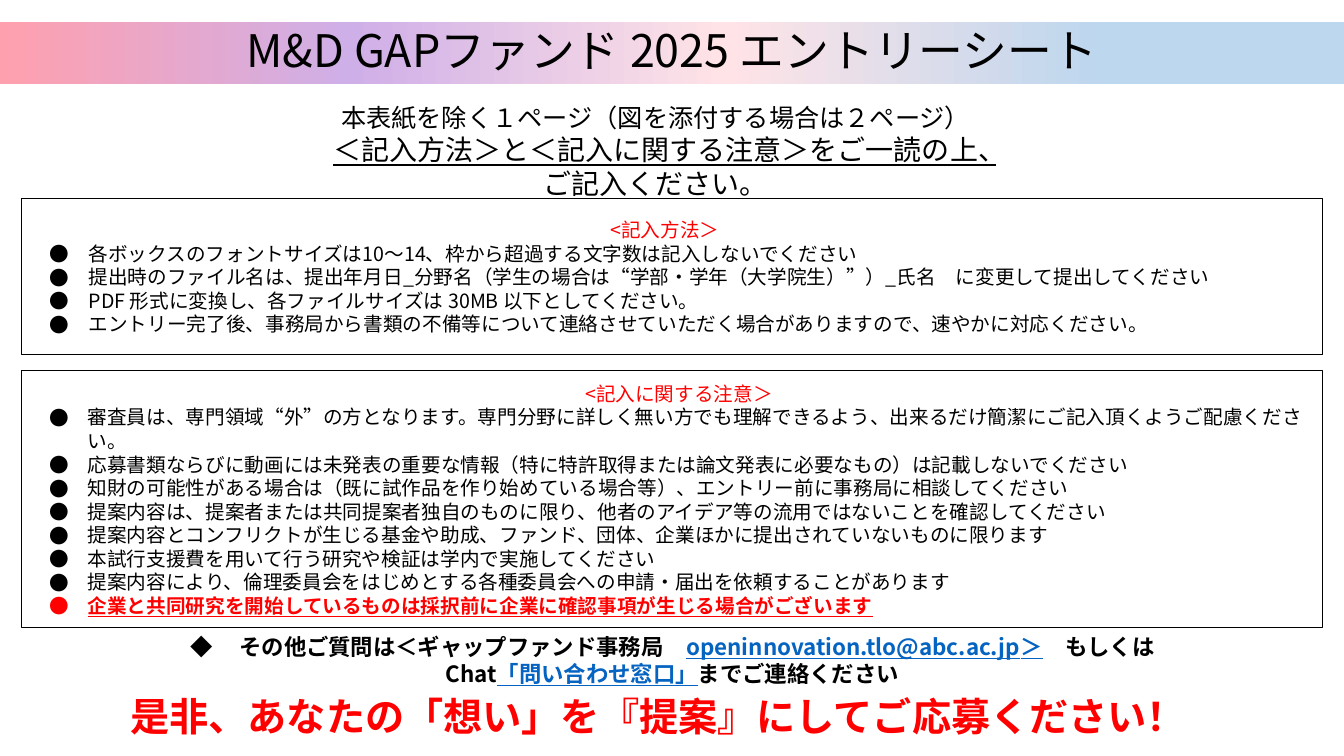
from lxml import etree
from pptx import Presentation
from pptx.dml.color import RGBColor
from pptx.enum import shapes, text
from pptx.oxml import ns
from pptx.util import Pt

BLACK = RGBColor(0x00, 0x00, 0x00)
RED = RGBColor(0xFF, 0x00, 0x00)
LINK_BLUE = RGBColor(0x05, 0x63, 0xC1)
BANNER_STOPS = [
    (0, RGBColor(0xFF, 0xA0, 0xAF)),
    (26, RGBColor(0xCF, 0xAF, 0xE7)),
    (54, RGBColor(0xFF, 0xE3, 0xE7)),
    (82, RGBColor(0xBD, 0xD7, 0xEE)),
]
FONT = "Noto Sans CJK JP"
SLIDE_SIZE = (960, 540)

BANNER = "M&D GAPファンド 2025 エントリーシート"
BANNER_PLACE = (0, 15.84, 960, 43.92)

INTRO = [
    ("本表紙を除く１ページ（図を添付する場合は２ページ）", {"size": 18}),
    ("＜記入方法＞と＜記入に関する注意＞をご一読の上、ご記入ください。", {"size": 20, "underline": True}),
]
INTRO_PLACE = (224.64, 69.84, 487.44, 47.52)

EMPHASIS = {"color": RED, "bold": True, "underline": True}
BOXES = [
    {
        "heading": "<記入方法＞\t",
        "place": (15.12, 141.84, 929.52, 111.6),
        "hang": 28.08,
        "items": [
            ("各ボックスのフォントサイズは10～14、枠から超過する文字数は記入しないでください", {}),
            ("提出時のファイル名は、提出年月日_分野名（学生の場合は“学部・学年（大学院生）”）_氏名　に変更して提出してください", {}),
            ("PDF 形式に変換し、各ファイルサイズは 30MB 以下としてください。", {}),
            ("エントリー完了後、事務局から書類の不備等について連絡させていただく場合がありますので、速やかに対応ください。", {}),
        ],
    },
    {
        "heading": "<記入に関する注意＞\t",
        "place": (15.12, 264.96, 929.52, 183.6),
        "hang": 27.36,
        "items": [
            ("審査員は、専門領域“外”の方となります。専門分野に詳しく無い方でも理解できるよう、出来るだけ簡潔にご記入頂くようご配慮ください。　", {}),
            ("応募書類ならびに動画には未発表の重要な情報（特に特許取得または論文発表に必要なもの）は記載しないでください", {}),
            ("知財の可能性がある場合は（既に試作品を作り始めている場合等）、エントリー前に事務局に相談してください", {}),
            ("提案内容は、提案者または共同提案者独自のものに限り、他者のアイデア等の流用ではないことを確認してください", {}),
            ("提案内容とコンフリクトが生じる基金や助成、ファンド、団体、企業ほかに提出されていないものに限ります", {}),
            ("本試行支援費を用いて行う研究や検証は学内で実施してください", {}),
            ("提案内容により、倫理委員会をはじめとする各種委員会への申請・届出を依頼することがあります", {}),
            ("企業と共同研究を開始しているものは採択前に企業に確認事項が生じる場合がございます", EMPHASIS),
        ],
    },
]

LINK = {"color": LINK_BLUE, "underline": True}
CONTACT = [
    [("その他ご質問は＜ギャップファンド事務局　", {}), ("openinnovation.tlo@abc.ac.jp＞", LINK), ("　もしくは", {})],
    [("Chat", {}), ("「問い合わせ窓口」", LINK), ("までご連絡ください", {})],
]
CONTACT_PLACE = (20.88, 448.56, 918.72, 46.08)
CONTACT_HANG = 35.28

CALL = "是非、あなたの「想い」を『提案』にしてご応募ください！　"
CALL_PLACE = (54.72, 491.04, 858.96, 41.04)

CENTER = text.PP_ALIGN.CENTER
LEFT = text.PP_ALIGN.LEFT


def points(values):
    return [Pt(value) for value in values]


def add_words(paragraph, words, size, color=BLACK, bold=False, underline=False):
    run = paragraph.add_run()
    run.text = words
    run.font.color.rgb = color
    for name, value in {"name": FONT, "size": Pt(size), "bold": bold, "underline": underline}.items():
        setattr(run.font, name, value)
    etree.SubElement(run.font._element, ns.qn("a:ea")).set("typeface", FONT)


def next_paragraph(frame, align):
    first = frame.paragraphs[0]
    paragraph = frame.add_paragraph() if first.runs else first
    paragraph.alignment = align
    return paragraph


def add_bullet(paragraph, mark, hang):
    properties = paragraph._p.get_or_add_pPr()
    properties.set("marL", str(Pt(hang)))
    properties.set("indent", str(-Pt(hang)))
    etree.SubElement(properties, ns.qn("a:buFont")).set("typeface", FONT)
    etree.SubElement(properties, ns.qn("a:buChar")).set("char", mark)


def add_text(slide, place, wrap=True):
    frame = slide.shapes.add_textbox(*points(place)).text_frame
    frame.word_wrap = wrap
    return frame


def add_banner(slide):
    banner = slide.shapes.title
    for side, value in zip(("left", "top", "width", "height"), points(BANNER_PLACE)):
        setattr(banner, side, value)
    banner.fill.gradient()
    banner.fill.gradient_angle = 0
    stops = banner._element.spPr.find(".//" + ns.qn("a:gsLst"))
    for stop in list(stops):
        stops.remove(stop)
    for position, color in BANNER_STOPS:
        stop = etree.SubElement(stops, ns.qn("a:gs"), pos=str(position * 1000))
        etree.SubElement(stop, ns.qn("a:srgbClr"), val=str(color))
    frame = banner.text_frame
    for name, value in {"word_wrap": True, "auto_size": text.MSO_AUTO_SIZE.NONE,
                        "vertical_anchor": text.MSO_ANCHOR.MIDDLE}.items():
        setattr(frame, name, value)
    paragraph = next_paragraph(frame, CENTER)
    paragraph.line_spacing = 0.9
    add_words(paragraph, BANNER, 32)


def add_box(slide, box):
    panel = slide.shapes.add_shape(shapes.MSO_SHAPE.RECTANGLE, *points(box["place"]))
    panel.shadow.inherit = False
    panel.fill.background()
    panel.line.color.rgb = BLACK
    panel.line.width = Pt(0.75)
    frame = panel.text_frame
    for name, value in {"word_wrap": True, "vertical_anchor": text.MSO_ANCHOR.MIDDLE,
                        "margin_left": Pt(20.16), "margin_right": Pt(0)}.items():
        setattr(frame, name, value)
    add_words(next_paragraph(frame, CENTER), box["heading"], 14, RED)
    for words, look in box["items"]:
        paragraph = next_paragraph(frame, LEFT)
        add_bullet(paragraph, "●", box["hang"])
        add_words(paragraph, words, 14, **look)


def main():
    deck = Presentation()
    deck.slide_width, deck.slide_height = points(SLIDE_SIZE)
    slide = deck.slides.add_slide(deck.slide_layouts[5])
    add_banner(slide)

    call = add_text(slide, CALL_PLACE)
    add_words(next_paragraph(call, CENTER), CALL, 28, RED, bold=True)

    intro = add_text(slide, INTRO_PLACE, wrap=False)
    for words, look in INTRO:
        add_words(next_paragraph(intro, CENTER), words, **look)

    for box in BOXES:
        add_box(slide, box)

    contact = add_text(slide, CONTACT_PLACE)
    for line in CONTACT:
        paragraph = next_paragraph(contact, CENTER)
        if line is CONTACT[0]:
            add_bullet(paragraph, "◆", CONTACT_HANG)
        for words, look in line:
            add_words(paragraph, words, 16, bold=True, **look)

    deck.save("out.pptx")


if __name__ == "__main__":
    main()
